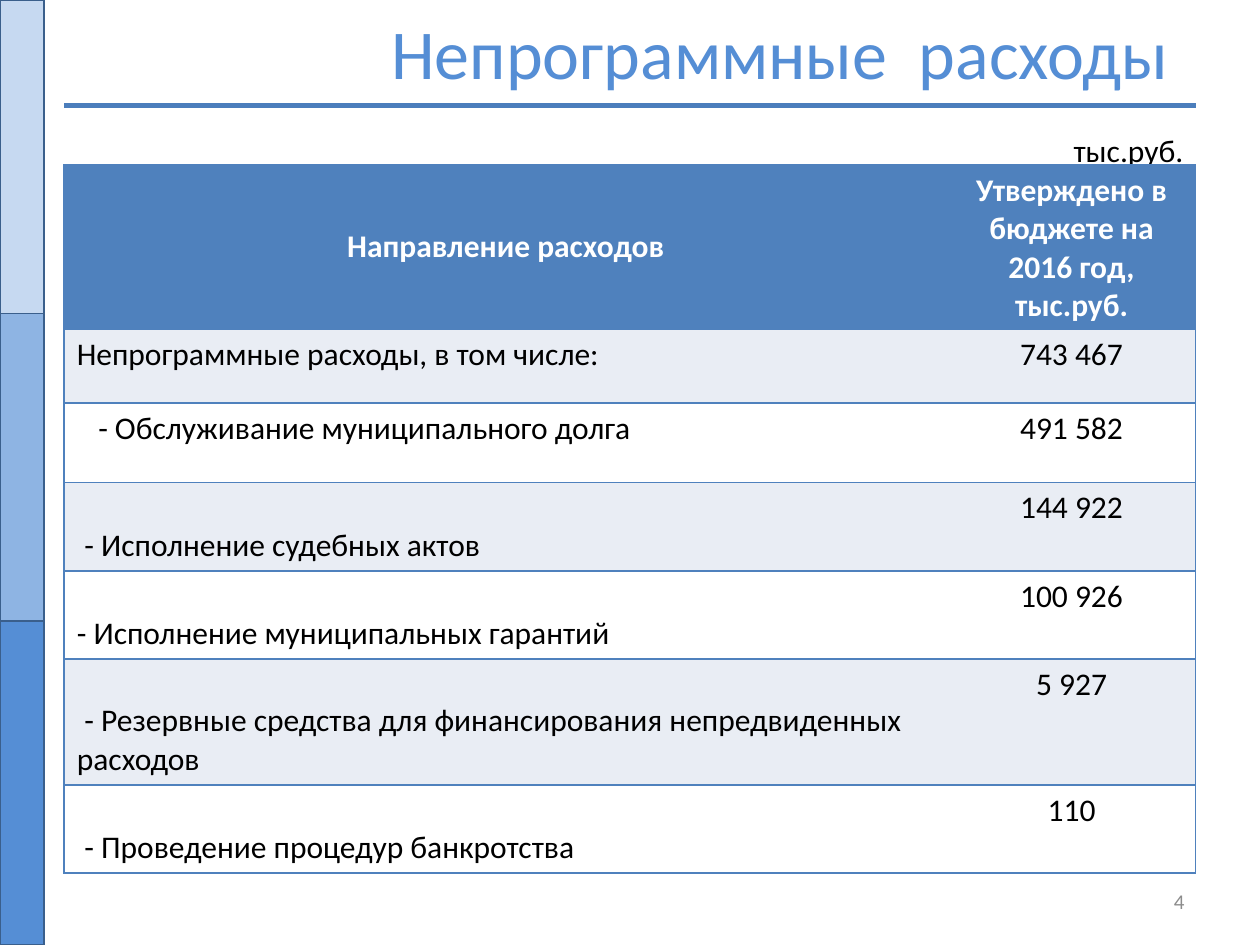
from lxml.etree import SubElement as Sub
from pptx import Presentation
from pptx.dml.color import RGBColor as RGB
from pptx.enum.shapes import MSO_CONNECTOR as Link, MSO_SHAPE as Kind
from pptx.enum.text import MSO_ANCHOR as Anchor, PP_ALIGN as Align
from pptx.oxml.ns import qn
from pptx.util import Inches, Pt

HUES = {
    "pale": "C6D9F1", "mid": "8EB4E3", "deep": "558ED5", "edge": "3A5F8C",
    "rule": "4B7EBC", "head": "4F81BD", "band": "E9EDF4",
    "white": "FFFFFF", "black": "000000", "gray": "8C8C8C",
}
HEAD = ("Направление расходов", "Утверждено в бюджете на 2016 год, тыс.руб.")
# label, value, row height, first-line indent, anchor of the label
ROWS = [
    ("Непрограммные расходы, в том числе:", "743 467", 0.59, 0, Anchor.TOP),
    ("- Обслуживание муниципального долга", "491 582", 0.63, 0.17, Anchor.TOP),
    ("- Исполнение судебных актов", "144 922", 0.7, 0.06, Anchor.BOTTOM),
    ("- Исполнение муниципальных гарантий", "100 926", 0.7, 0, Anchor.BOTTOM),
    ("- Резервные средства для финансирования непредвиденных расходов",
     "5 927", 1, 0.06, Anchor.BOTTOM),
    ("- Проведение процедур банкротства", "110", 0.7, 0.06, Anchor.BOTTOM),
]


def hue(name):
    return RGB.from_string(HUES[name])


def write(frame, text, size, color, align, anchor=Anchor.TOP, bold=False):
    frame.word_wrap = True
    frame.vertical_anchor = anchor
    par = frame.paragraphs[0]
    par.alignment = align
    run = par.add_run()
    run.text = text
    look = {"name": "Calibri", "size": Pt(size), "bold": bold}
    for key, val in look.items():
        setattr(run.font, key, val)
    run.font.color.rgb = hue(color)
    return par


def add_note(slide, box, text, size, color, anchor):
    note = slide.shapes.add_textbox(*map(Inches, box))
    write(note.text_frame, text, size, color, Align.RIGHT, anchor)


def add_side(slide, left, width, stops):
    """Stack the coloured bars between the given heights."""
    for name, top, end in zip(("pale", "mid", "deep"), stops, stops[1:]):
        bar = slide.shapes.add_shape(
            Kind.RECTANGLE, *map(Inches, (left, top, width, end - top)))
        bar.shadow.inherit = False
        bar.fill.solid()
        bar.fill.fore_color.rgb = hue(name)
        bar.line.color.rgb = hue("edge")
        bar.line.width = Pt(0)


def add_title(slide, box, text):
    title = slide.shapes.title
    for key, val in zip(("left", "top", "width", "height"), box):
        setattr(title, key, Inches(val))
    write(title.text_frame, text, 40, "deep", Align.RIGHT, Anchor.MIDDLE)


def add_rule(slide, left, right, top):
    rule = slide.shapes.add_connector(
        Link.STRAIGHT, *map(Inches, (left, top, right, top)))
    rule.line.color.rgb = hue("rule")
    rule.line.width = Pt(3)
    Sub(rule._element.spPr, qn("a:effectLst"))


def paint(cell, fill, sides):
    """Border the listed sides, clear the others, then fill the cell."""
    props = cell._tc.get_or_add_tcPr()
    for side in "LRTB":
        line = Sub(props, qn(f"a:ln{side}"), w=str(Pt(1)))
        if side in sides:
            solid = Sub(line, qn("a:solidFill"))
            Sub(solid, qn("a:srgbClr"), val=HUES["head"])
        else:
            Sub(line, qn("a:noFill"))
    cell.fill.solid()
    cell.fill.fore_color.rgb = hue(fill)


def add_grid(slide, left, top, cols):
    highs = [1.3] + [row[2] for row in ROWS]
    box = (left, top, sum(cols), sum(highs))
    grid = slide.shapes.add_table(
        len(highs), len(cols), *map(Inches, box)).table
    for col, wide in zip(grid.columns, cols):
        col.width = Inches(wide)
    for row, high in zip(grid.rows, highs):
        row.height = Inches(high)
    for num, row in enumerate(grid.rows):
        fill = "head" if num == 0 else "band" if num % 2 else "white"
        for cell, sides in zip(row.cells, ("LTB", "RTB")):
            paint(cell, fill, sides)
    for num, text in enumerate(HEAD):
        cell = grid.cell(0, num)
        write(cell.text_frame, text, 18, "white", Align.CENTER, bold=True)
        cell.vertical_anchor = Anchor.MIDDLE
    for num, (label, value, _, indent, anchor) in enumerate(ROWS, 1):
        name, total = grid.cell(num, 0), grid.cell(num, 1)
        par = write(name.text_frame, label, 18, "black", Align.LEFT)
        par._p.get_or_add_pPr().set("indent", str(Inches(indent)))
        name.vertical_anchor = anchor
        write(total.text_frame, value, 18, "black", Align.CENTER)
        total.vertical_anchor = Anchor.TOP


def main():
    deck = Presentation()
    deck.slide_width, deck.slide_height = Inches(10), Inches(7.5)
    slide = deck.slides.add_slide(deck.slide_layouts[5])
    add_side(slide, 0, 0.35, (0, 2.49, 4.93, 7.5))
    add_rule(slide, 0.51, 9.49, 0.84)
    add_note(slide, (7.17, 6.95, 2.33, 0.4), "4", 12, "gray", Anchor.MIDDLE)
    add_title(slide, (0.5, 0.13, 9, 0.55), "Непрограммные  расходы ")
    add_note(slide, (7.99, 0.99, 1.5, 0.4), "тыс.руб.", 18, "black",
             Anchor.TOP)
    add_grid(slide, 0.51, 1.31, (7.01, 1.97))
    deck.save("out.pptx")


if __name__ == "__main__":
    main()
